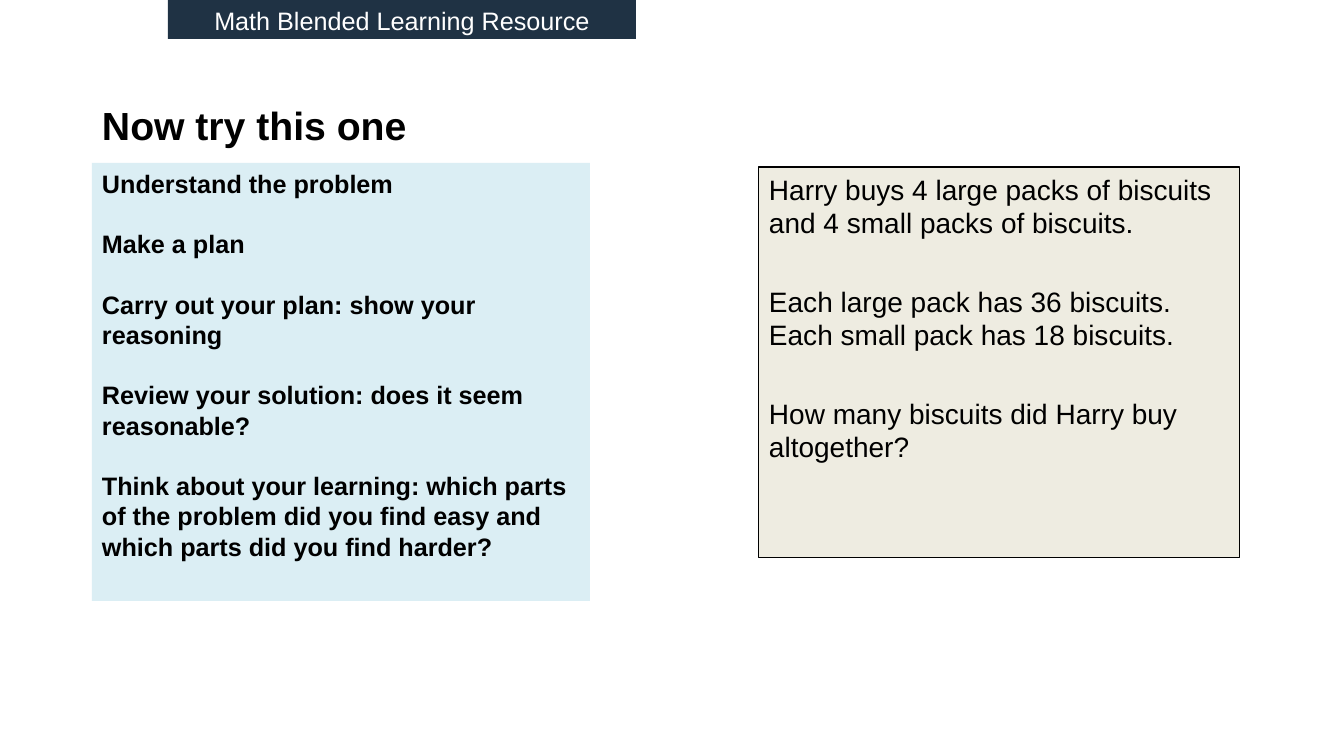
from pptx import Presentation
from pptx.dml.color import RGBColor
from pptx.enum.shapes import MSO_SHAPE
from pptx.enum.text import MSO_ANCHOR, PP_ALIGN
from pptx.util import Pt

PX = 914400 / 100.8


def px(*lengths):
    """Turn pixel lengths into EMU."""
    return [round(length * PX) for length in lengths]


def write(shape, paragraphs, *, size, color="000000", bold=False, gap=0,
          align=PP_ALIGN.LEFT, anchor=MSO_ANCHOR.TOP, inset_top=5):
    frame = shape.text_frame
    frame.word_wrap = True
    frame.vertical_anchor = anchor
    frame.margin_left, frame.margin_top = px(10, inset_top)
    frame.margin_right, frame.margin_bottom = px(10, 5)
    frame.text = "\n".join(paragraphs)
    for number, paragraph in enumerate(frame.paragraphs):
        paragraph.alignment = align
        if number:
            paragraph.space_before = Pt(gap)
        for run in paragraph.runs:
            run.font.name = "Arial"
            run.font.size = Pt(size)
            run.font.bold = bold
            run.font.color.rgb = RGBColor.from_string(color)


prs = Presentation()
prs.slide_width, prs.slide_height = px(1344, 756)
slide = prs.slides.add_slide(prs.slide_layouts[5])

title = slide.shapes.title
title.left, title.top, title.width, title.height = px(92, 92, 907, 65)
write(title, ["Now try this one"], size=28, bold=True, anchor=MSO_ANCHOR.MIDDLE)

steps = [
    "Understand the problem",
    "Make a plan",
    "Carry out your plan: show your reasoning",
    "Review your solution: does it seem reasonable?",
    "Think about your learning: which parts of the problem did you find easy "
    "and which parts did you find harder?",
]
problem = [
    "Harry buys 4 large packs of biscuits and 4 small packs of biscuits.",
    "Each large pack has 36 biscuits. Each small pack has 18 biscuits.",
    "How many biscuits did Harry buy altogether?",
]
panels = [
    ((92, 163, 498, 438), "DBEEF4", None, steps,
     dict(size=18, bold=True, gap=21.6)),
    ((168, 0, 468, 39), "1F3244", None, ["Math Blended Learning Resource"],
     dict(size=18, color="FFFFFF", align=PP_ALIGN.CENTER)),
    ((759, 167, 481, 391), "EEECE1", "000000", problem,
     dict(size=20, gap=32)),
]
for box, fill, outline, paragraphs, text_format in panels:
    panel = slide.shapes.add_shape(MSO_SHAPE.RECTANGLE, *px(*box))
    panel.shadow.inherit = False
    panel.fill.solid()
    panel.fill.fore_color.rgb = RGBColor.from_string(fill)
    if outline:
        panel.line.color.rgb = RGBColor.from_string(outline)
        panel.line.width = Pt(0.75)
    else:
        panel.line.fill.background()
    write(panel, paragraphs, **text_format)

prs.save("out.pptx")
